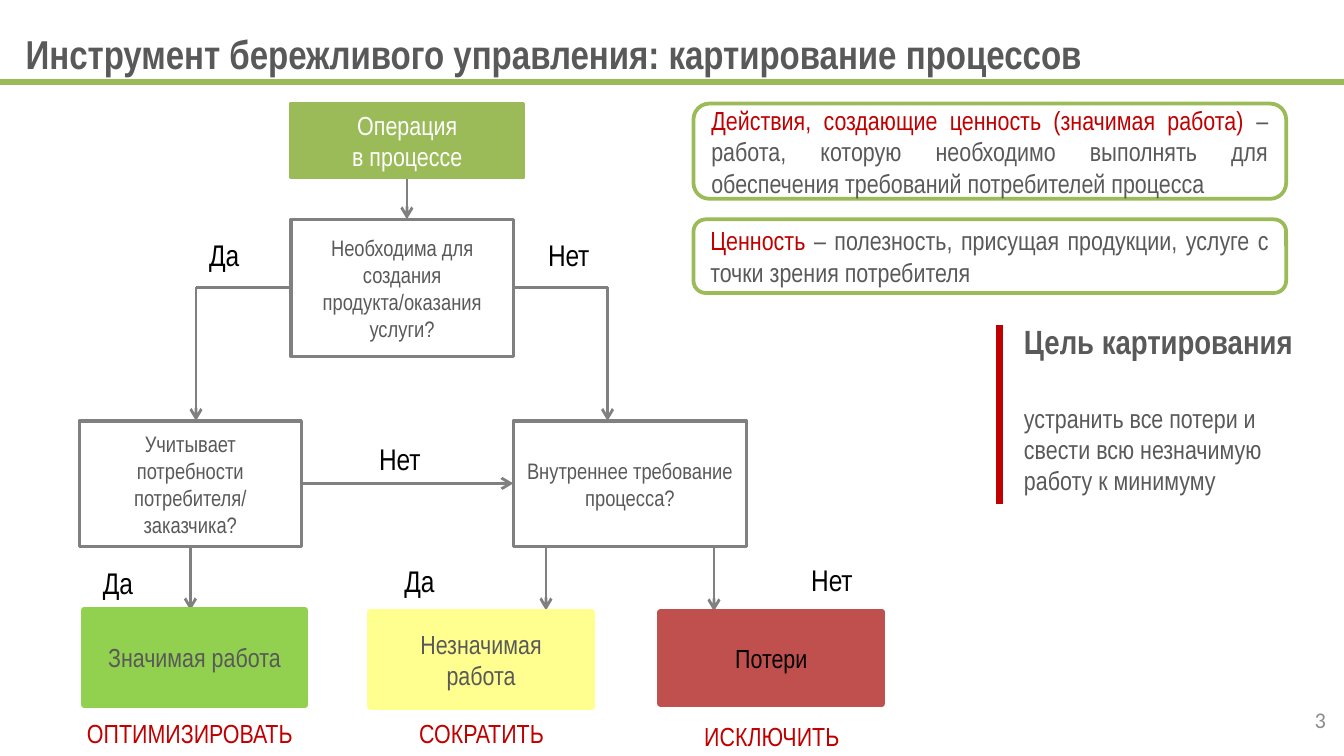
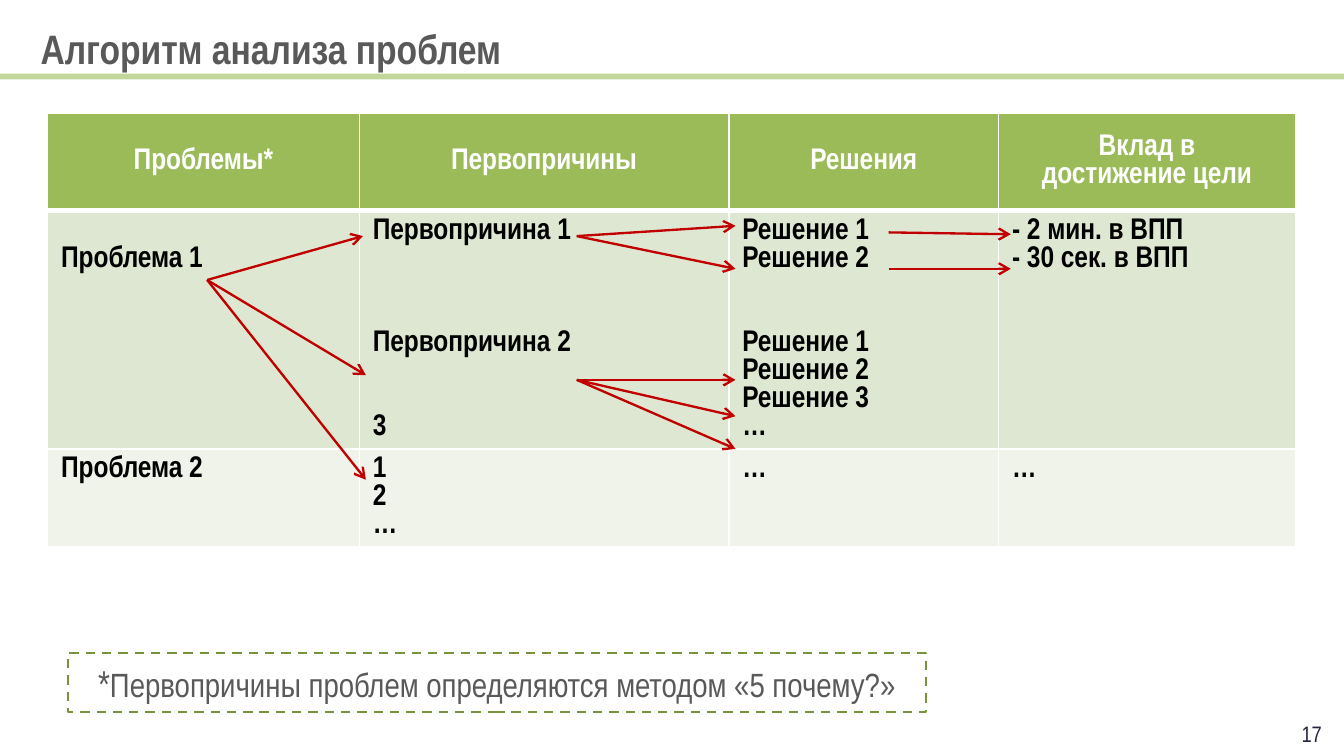
from dataclasses import dataclass
from typing import Optional

from lxml.etree import SubElement
from pptx import Presentation
from pptx.dml.color import RGBColor
from pptx.enum.dml import MSO_LINE
from pptx.enum.shapes import MSO_CONNECTOR, MSO_SHAPE
from pptx.enum.text import MSO_ANCHOR, MSO_AUTO_SIZE, PP_ALIGN
from pptx.oxml.ns import qn
from pptx.util import Pt

COLORS = {
    "white": "FFFFFF", "black": "000000", "text": "595959", "line": "808080",
    "green": "9BBB59", "red": "C00000", "value": "92D050", "minor": "FFFF8F",
    "waste": "C0504D", "number": "8C8C8C", "navy": "23263C", "olive": "77933C",
    "band": "DEE7D1", "light_band": "EFF3EA",
}
FONT = "Arial Narrow"
TITLE_ONLY = 5
ROW_LINE = 15


@dataclass(frozen=True)
class Box:
    left: float
    top: float
    width: float
    height: float

    def lengths(self) -> tuple:
        return Pt(self.left), Pt(self.top), Pt(self.width), Pt(self.height)


@dataclass(frozen=True)
class Style:
    size: float
    color: str = "text"
    bold: bool = False
    align: PP_ALIGN = PP_ALIGN.LEFT
    font: str = FONT


@dataclass(frozen=True)
class Node:
    box: Box
    text: str
    style: Style
    fill: Optional[str] = None
    line: str = "line"
    line_width: float = 1.75


@dataclass(frozen=True)
class Label:
    box: Box
    text: str
    style: Style


@dataclass(frozen=True)
class Definition:
    box: Box
    term: str
    meaning: str


@dataclass(frozen=True)
class Link:
    start: tuple
    end: tuple
    arrow: bool = True


@dataclass(frozen=True)
class Entry:
    text: str
    skipped_lines: int = 0


def rgb(name: str) -> RGBColor:
    return RGBColor.from_string(COLORS[name])


def style_run(run, style: Style) -> None:
    run.font.name = style.font
    run.font.size = Pt(style.size)
    run.font.bold = style.bold
    run.font.color.rgb = rgb(style.color)


def style_paragraph(paragraph, style: Style) -> None:
    paragraph.alignment = style.align
    for run in paragraph.runs:
        style_run(run, style)


def write(text_frame, text: str, style: Style, anchor=MSO_ANCHOR.MIDDLE) -> None:
    text_frame.auto_size = MSO_AUTO_SIZE.NONE
    text_frame.word_wrap = True
    text_frame.vertical_anchor = anchor
    text_frame.text = text
    for paragraph in text_frame.paragraphs:
        style_paragraph(paragraph, style)


def write_parts(shape, align: PP_ALIGN, *parts: tuple) -> None:
    text_frame = shape.text_frame
    text_frame.word_wrap = True
    text_frame.vertical_anchor = MSO_ANCHOR.MIDDLE
    paragraph = text_frame.paragraphs[0]
    paragraph.alignment = align
    for text, style in parts:
        run = paragraph.add_run()
        run.text = text
        style_run(run, style)


def add_label(slide, label: Label, anchor=MSO_ANCHOR.TOP):
    shape = slide.shapes.add_textbox(*label.box.lengths())
    write(shape.text_frame, label.text, label.style, anchor)
    return shape


def add_frame(slide, kind: MSO_SHAPE, box: Box, line: str, width: float, fill: Optional[str] = None):
    shape = slide.shapes.add_shape(kind, *box.lengths())
    shape.shadow.inherit = False
    if fill:
        shape.fill.solid()
        shape.fill.fore_color.rgb = rgb(fill)
    else:
        shape.fill.background()
    shape.line.color.rgb = rgb(line)
    shape.line.width = Pt(width)
    return shape


def add_node(slide, node: Node) -> None:
    shape = add_frame(slide, MSO_SHAPE.RECTANGLE, node.box, node.line, node.line_width, node.fill)
    write(shape.text_frame, node.text, node.style)


def add_link(slide, link: Link, color: str, width: float, opacity: int = 100) -> None:
    points = [Pt(value) for value in (*link.start, *link.end)]
    connector = slide.shapes.add_connector(MSO_CONNECTOR.STRAIGHT, *points)
    connector.line.color.rgb = rgb(color)
    connector.line.width = Pt(width)
    properties = connector._element.spPr
    outline = properties.find(qn("a:ln"))
    if opacity < 100:
        SubElement(outline.find(".//" + qn("a:srgbClr")), qn("a:alpha"), val=str(opacity * 1000))
    if link.arrow:
        SubElement(outline, qn("a:tailEnd"), type="arrow")
    SubElement(properties, qn("a:effectLst"))


def add_titled_slide(presentation, title: str, box: Box, size: float, rule_top: float, opacity: int):
    slide = presentation.slides.add_slide(presentation.slide_layouts[TITLE_ONLY])
    shape = slide.shapes.title
    shape.left, shape.top, shape.width, shape.height = box.lengths()
    write(shape.text_frame, title, Style(size, bold=True))
    add_link(slide, Link((0, rule_top), (720, rule_top), False), "green", 3, opacity)
    return slide


def build_mapping_slide(presentation) -> None:
    slide = add_titled_slide(presentation, "Инструмент бережливого управления: картирование процессов",
                             Box(6.5, 12, 648, 33), 21.6, 44, 100)
    center = PP_ALIGN.CENTER
    question = Style(12, align=center)
    outcome = Style(14, align=center)
    verdict = Style(14, "red", align=center)
    answer = Style(16, "black")

    for link in (
        Link((218, 95), (218, 117.5)),
        Link((156, 154), (105, 154), False),
        Link((105, 154), (105, 225.5)),
        Link((275, 154), (325.5, 154), False),
        Link((325.5, 154), (325.5, 225.5)),
        Link((161, 259), (275, 259)),
        Link((102, 293), (102, 327)),
        Link((292.5, 293), (292.5, 327)),
        Link((382.5, 293), (382.5, 327.5)),
    ):
        add_link(slide, link, "line", 1.5)

    for node in (
        Node(Box(156, 55.5, 124.5, 39.5), "Операция\vв процессе",
             Style(14, "white", align=center), "green", "green", 2),
        Node(Box(156, 117.5, 119, 73.5), "Необходима для создания продукта/оказания услуги?", question),
        Node(Box(42.5, 225.5, 119, 67.5), "Учитывает потребности потребителя/\nзаказчика?", question),
        Node(Box(275, 225.5, 125, 67.5), "Внутреннее требование процесса?", question),
        Node(Box(45, 327, 118.5, 50.5), "Значимая работа", outcome, "value", "value", 3.5),
        Node(Box(198.5, 328, 118.5, 50.5), "Незначимая работа", outcome, "minor", "minor", 3.5),
        Node(Box(354, 328, 118.5, 49), "Потери",
             Style(14, "black", align=center), "waste", "waste", 3.5),
    ):
        add_node(slide, node)

    for left, top, text in ((105, 123, "Да"), (286.5, 123, "Нет"), (427.5, 297.5, "Нет"),
                            (48, 299, "Да"), (209.5, 298, "Да"), (196, 232.5, "Нет")):
        add_label(slide, Label(Box(left, top, 51, 26.5), text, answer))

    for label in (
        Label(Box(39.5, 381, 130, 24), "ОПТИМИЗИРОВАТЬ", Style(14, "red")),
        Label(Box(190, 381, 136, 24), "СОКРАТИТЬ", verdict),
        Label(Box(354, 382.5, 119, 22.5), "ИСКЛЮЧИТЬ", verdict),
    ):
        add_label(slide, label)

    for definition in (
        Definition(Box(371.5, 55.5, 317.5, 51), "Действия, создающие ценность (значимая работа) ",
                   "– работа, которую необходимо выполнять для обеспечения требований потребителей процесса"),
        Definition(Box(371.5, 117.5, 317.5, 39.5), "Ценность",
                   " – полезность, присущая продукции, услуге с точки зрения потребителя"),
    ):
        shape = add_frame(slide, MSO_SHAPE.ROUNDED_RECTANGLE, definition.box, "green", 2)
        write_parts(shape, PP_ALIGN.JUSTIFY, (definition.term, Style(14, "red")),
                    (definition.meaning, Style(14)))

    add_link(slide, Link((535.5, 174), (535.5, 270), False), "red", 4)
    goal = add_label(slide, Label(
        Box(541.5, 168.5, 169.5, 101.5),
        "Цель картирования\nустранить все потери и свести всю незначимую работу к минимуму", Style(14)))
    heading, description = goal.text_frame.paragraphs
    style_paragraph(heading, Style(18, bold=True))
    description.space_before = Pt(21.7)

    number = Style(12, "number", align=PP_ALIGN.RIGHT, font="Calibri")
    add_label(slide, Label(Box(549.5, 375, 168, 21.5), "3", number), MSO_ANCHOR.MIDDLE)


def set_borders(cell, bottom: float) -> None:
    properties = cell._tc.get_or_add_tcPr()
    widths = {"a:lnL": 1, "a:lnR": 1, "a:lnT": 1, "a:lnB": bottom}
    for position, (tag, width) in enumerate(widths.items()):
        border = SubElement(properties, qn(tag), w=str(Pt(width)))
        fill = SubElement(border, qn("a:solidFill"))
        SubElement(fill, qn("a:srgbClr"), val=COLORS["white"])
        properties.insert(position, border)


def fill_cell(cell, entries: list, style: Style, fill: str, anchor, bottom: float) -> None:
    cell.text_frame.text = "\n".join(entry.text for entry in entries)
    cell.vertical_anchor = anchor
    cell.margin_top = Pt(3.6 + entries[0].skipped_lines * ROW_LINE)
    for index, (paragraph, entry) in enumerate(zip(cell.text_frame.paragraphs, entries)):
        style_paragraph(paragraph, style)
        paragraph.line_spacing = Pt(ROW_LINE)
        if index and entry.skipped_lines:
            paragraph.space_before = Pt(entry.skipped_lines * ROW_LINE)
    cell.fill.solid()
    cell.fill.fore_color.rgb = rgb(fill)
    set_borders(cell, bottom)


def add_problem_table(slide) -> None:
    rows = [
        [[Entry("Проблемы*")], [Entry("Первопричины")], [Entry("Решения")],
         [Entry("Вклад в"), Entry("достижение цели")]],
        [[Entry("Проблема 1", 1)],
         [Entry("Первопричина 1"), Entry("Первопричина 2", 3), Entry("3", 2)],
         [Entry("Решение 1"), Entry("Решение 2"), Entry("Решение 1", 2),
          Entry("Решение 2"), Entry("Решение 3"), Entry("…")],
         [Entry("- 2 мин. в ВПП"), Entry("- 30 сек. в ВПП")]],
        [[Entry("Проблема 2")], [Entry("1"), Entry("2"), Entry("…")], [Entry("…")], [Entry("…")]],
    ]
    widths = (167, 198, 144.5, 159)
    heights = (52.5, 127.5, 52.5)
    box = Box(25.5, 60.5, sum(widths), sum(heights))
    table = slide.shapes.add_table(len(heights), len(widths), *box.lengths()).table
    for column, width in zip(table.columns, widths):
        column.width = Pt(width)
    header = Style(16, "white", True, PP_ALIGN.CENTER)
    body = Style(16, "black", True)
    looks = (
        (header, "green", MSO_ANCHOR.MIDDLE, 3),
        (body, "band", MSO_ANCHOR.TOP, 1),
        (body, "light_band", MSO_ANCHOR.TOP, 1),
    )
    for row, height, cells, look in zip(table.rows, heights, rows, looks):
        row.height = Pt(height)
        for cell, entries in zip(row.cells, cells):
            fill_cell(cell, entries, *look)


def build_analysis_slide(presentation) -> None:
    slide = add_titled_slide(presentation, "Алгоритм анализа проблем",
                             Box(14.5, 15, 654.5, 21.5), 22, 41, 60)
    add_problem_table(slide)
    branches = {
        (111, 150): ((194.5, 126.5), (196, 201), (196, 257)),
        (309, 126.5): ((394, 121), (394, 144)),
        (309, 203.5): ((394, 203.5), (394, 223), (394, 240.5)),
        (476, 124.5): ((541.5, 125.5),),
        (476, 144): ((541.5, 144),),
    }
    for start, ends in branches.items():
        for end in ends:
            add_link(slide, Link(start, end), "red", 1.25)

    note = add_frame(slide, MSO_SHAPE.RECTANGLE, Box(36.5, 350, 459.5, 31.5), "olive", 1.25)
    note.line.dash_style = MSO_LINE.DASH
    write_parts(note, PP_ALIGN.CENTER, ("*", Style(20)),
                ("Первопричины проблем определяются методом «5 почему?»", Style(18)))

    number = Style(12, "navy", align=PP_ALIGN.CENTER)
    add_label(slide, Label(Box(689, 385, 27.5, 16.5), "17", number), MSO_ANCHOR.MIDDLE)


def main() -> None:
    presentation = Presentation()
    presentation.slide_width = Pt(720)
    presentation.slide_height = Pt(405)
    build_mapping_slide(presentation)
    build_analysis_slide(presentation)
    presentation.save("out.pptx")


if __name__ == "__main__":
    main()
